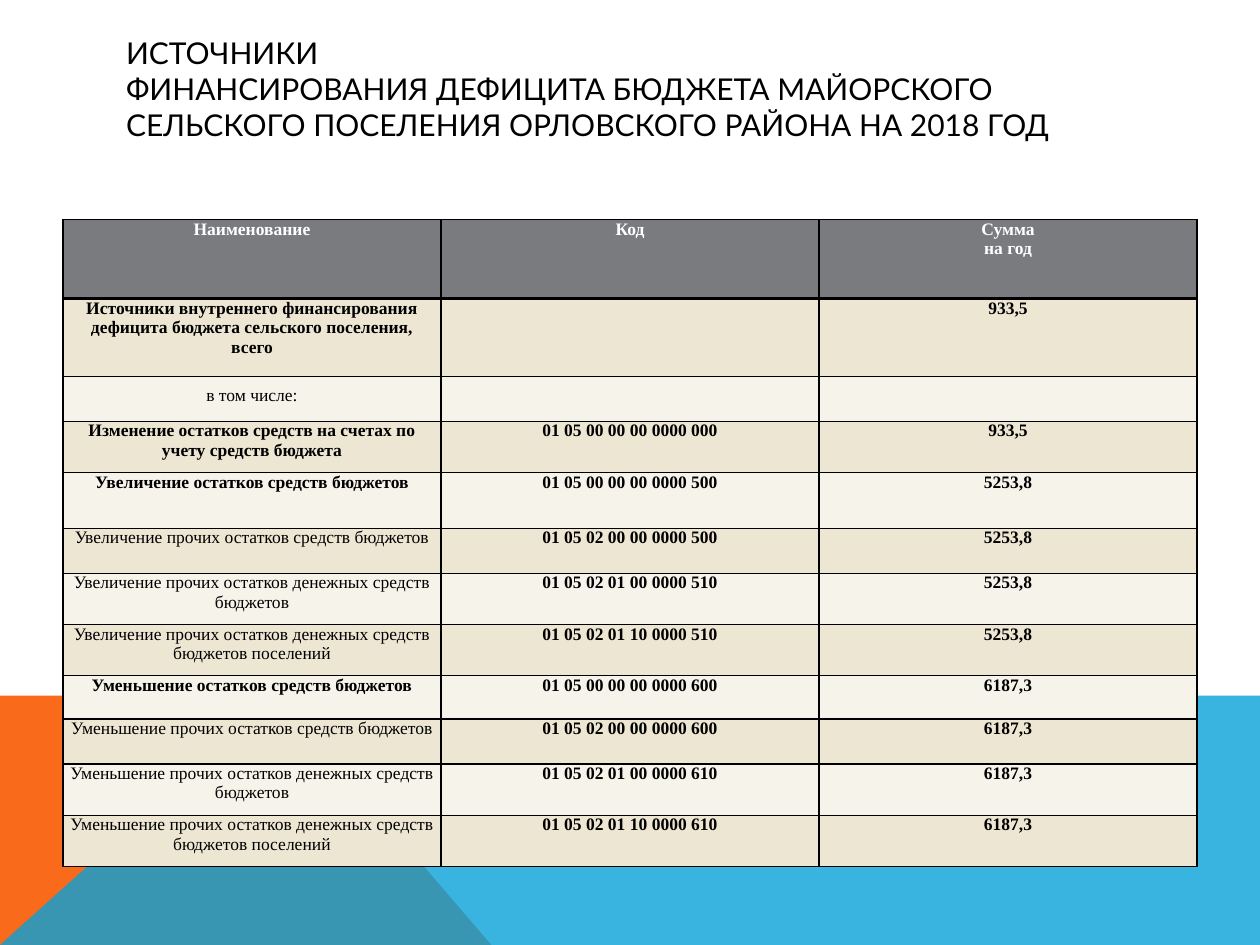
from lxml.etree import SubElement
from pptx import Presentation
from pptx.dml.color import RGBColor
from pptx.enum.text import MSO_ANCHOR, PP_ALIGN
from pptx.oxml.ns import qn
from pptx.util import Inches, Pt

W, H = Inches(14), Inches(10.5)
C = {"black": "000000", "white": "FFFFFF", "orange": "F96A1B", "blue": "08A1D9",
     "header": "797B7E", "sand": "EDE6D3", "cream": "F6F3EA"}

TITLE = ["ИСТОЧНИКИ",
         "ФИНАНСИРОВАНИЯ ДЕФИЦИТА БЮДЖЕТА МАЙОРСКОГО СЕЛЬСКОГО ПОСЕЛЕНИЯ "
         "ОРЛОВСКОГО РАЙОНА НА 2018 ГОД"]
HEADER = ("Наименование", "Код", "Сумма\nна год")
# name, code, sum, row height in inches, is the name bold
ROWS = [
    ("Источники внутреннего финансирования дефицита бюджета сельского поселения, всего",
     "", "933,5", 0.86, True),
    ("в том числе:", "", "", 0.5, False),
    ("Изменение остатков средств на счетах по учету средств бюджета",
     "01 05 00 00 00 0000 000", "933,5", 0.57, True),
    ("Увеличение остатков средств бюджетов",
     "01 05 00 00 00 0000 500", "5253,8", 0.62, True),
    ("Увеличение прочих остатков средств бюджетов",
     "01 05 02 00 00 0000 500", "5253,8", 0.5, False),
    ("Увеличение прочих остатков денежных средств бюджетов",
     "01 05 02 01 00 0000 510", "5253,8", 0.57, False),
    ("Увеличение прочих остатков денежных средств бюджетов поселений",
     "01 05 02 01 10 0000 510", "5253,8", 0.57, False),
    ("Уменьшение остатков средств бюджетов",
     "01 05 00 00 00 0000 600", "6187,3", 0.48, True),
    ("Уменьшение прочих остатков средств бюджетов",
     "01 05 02 00 00 0000 600", "6187,3", 0.5, False),
    ("Уменьшение прочих остатков денежных средств бюджетов",
     "01 05 02 01 00 0000 610", "6187,3", 0.57, False),
    ("Уменьшение прочих остатков денежных средств бюджетов поселений",
     "01 05 02 01 10 0000 610", "6187,3", 0.57, False),
]
HEADER_HEIGHT = 0.88


def rgb(name):
    return RGBColor.from_string(C[name])


def add_run(p, text, font, size, color, bold=False):
    r = p.add_run()
    r.text = text
    r.font.name, r.font.size, r.font.bold = font, Pt(size), bold
    r.font.color.rgb = rgb(color)


def add_polygon(s, box, points, color, alpha=100):
    """Points are shares of the box."""
    x, y, w, h = box
    pts = [(int(x + w * px), int(y + h * py)) for px, py in points]
    fb = s.shapes.build_freeform(*pts[0], scale=1.0)
    fb.add_line_segments(pts[1:], close=True)
    sp = fb.convert_to_shape()
    sp.shadow.inherit = False
    sp.line.fill.background()
    sp.fill.solid()
    sp.fill.fore_color.rgb = rgb(color)
    if alpha < 100:
        clr = sp.fill._xPr.find(qn("a:solidFill"))[0]
        SubElement(clr, qn("a:alpha"), val=str(alpha * 1000))


def add_footer_band(s, box):
    add_polygon(s, box, [(0, 1), (0, 0), (0.22, 0), (0.39, 1)], "orange")
    add_polygon(s, box, [(0, 1), (0.22, 0), (1, 0), (1, 1)], "blue", 80)


def add_title(s, box):
    tf = s.shapes.add_textbox(*box).text_frame
    tf.word_wrap = True
    tf.vertical_anchor = MSO_ANCHOR.MIDDLE
    tf.margin_left = tf.margin_right = Inches(0.14)
    tf.margin_top = tf.margin_bottom = Inches(0.07)
    p = tf.paragraphs[0]
    for i, line in enumerate(TITLE):
        if i:
            p.add_line_break()
        add_run(p, line, "Lato", 24, "black")


def set_borders(cell, widths):
    """Widths in points for each of the sides L, R, T, B."""
    tc_pr = cell._tc.get_or_add_tcPr()
    for side, width in widths.items():
        ln = SubElement(tc_pr, qn(f"a:ln{side}"), w=str(Pt(width)))
        fill = SubElement(ln, qn("a:solidFill"))
        SubElement(fill, qn("a:srgbClr"), val=C["black"])


def fill_cell(cell, text, fill, color, bold, spacing=None):
    cell.fill.solid()
    cell.fill.fore_color.rgb = rgb(fill)
    if not text:
        return
    cell.margin_left = cell.margin_right = Inches(0.07)
    cell.margin_top = cell.margin_bottom = 0
    tf = cell.text_frame
    for i, line in enumerate(text.split("\n")):
        p = tf.add_paragraph() if i else tf.paragraphs[0]
        p.alignment = PP_ALIGN.CENTER
        if spacing:
            p.line_spacing = spacing
        add_run(p, line, "Times New Roman", 14, color, bold)


def add_budget_table(s, box):
    table = s.shapes.add_table(len(ROWS) + 1, len(HEADER), *box).table
    for col in table.columns:
        col.width = box[2] // len(HEADER)
    for i, (*texts, height, name_bold) in enumerate([(*HEADER, HEADER_HEIGHT, True), *ROWS]):
        table.rows[i].height = Inches(height)
        fill = "header" if i == 0 else "sand" if i % 2 else "cream"
        for j, text in enumerate(texts):
            cell = table.cell(i, j)
            set_borders(cell, {"L": 1, "R": 1, "T": 3 if i == 1 else 1,
                               "B": 3 if i == 0 else 1})
            fill_cell(cell, text, fill, "black" if i else "white", name_bold or j > 0,
                      1.5 if text == "в том числе:" else None)


def main():
    prs = Presentation()
    prs.slide_width, prs.slide_height = W, H
    s = prs.slides.add_slide(prs.slide_layouts[6])
    band_top = Inches(7.73)
    add_footer_band(s, (0, band_top, W, H - band_top))
    add_title(s, (int(W * 0.09), Inches(0.56), Inches(11.52), int(H * 0.08)))
    add_budget_table(s, (int(W * 0.05), Inches(2.44), int(W * 0.9), Inches(7.22)))
    prs.save("out.pptx")


if __name__ == "__main__":
    main()
